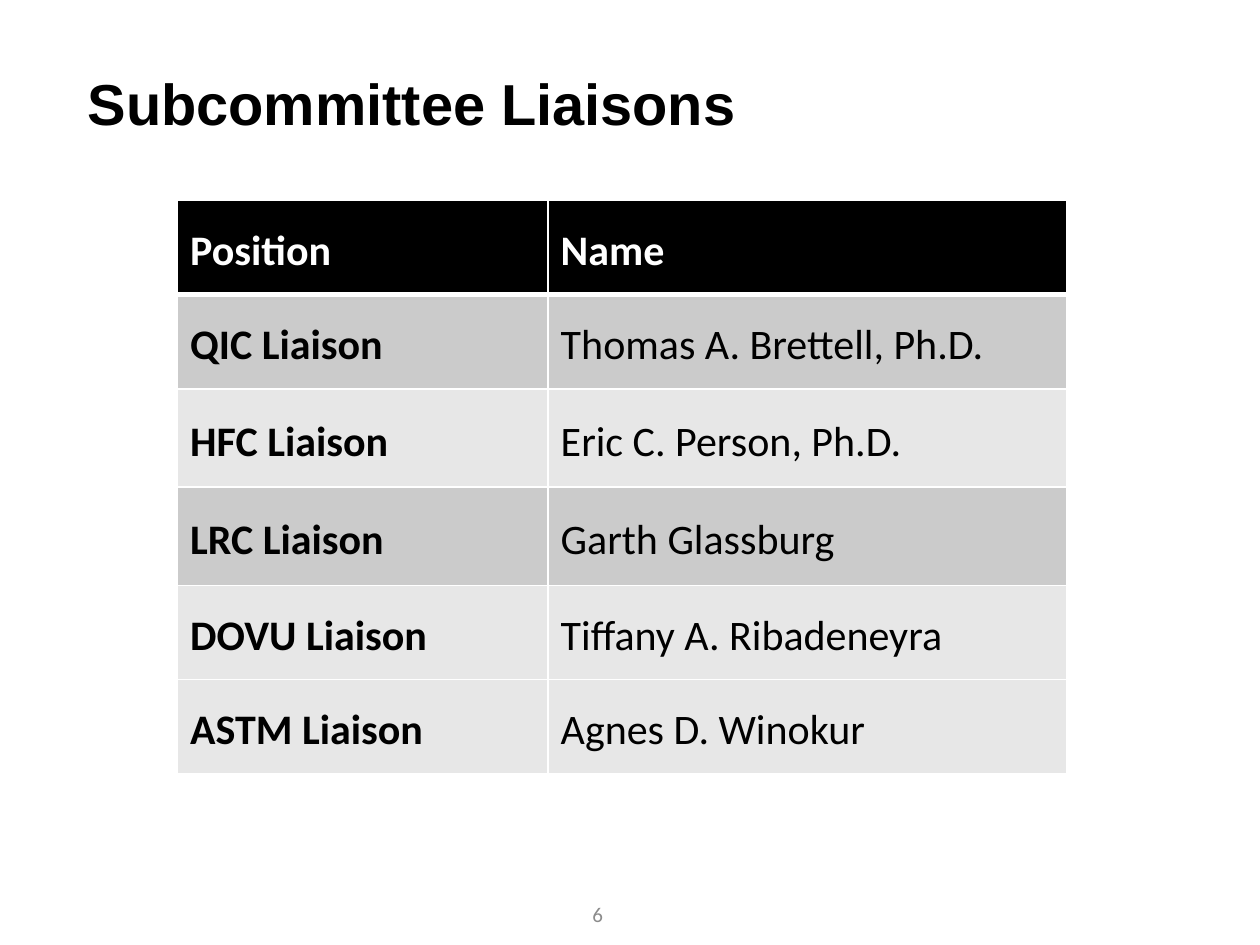
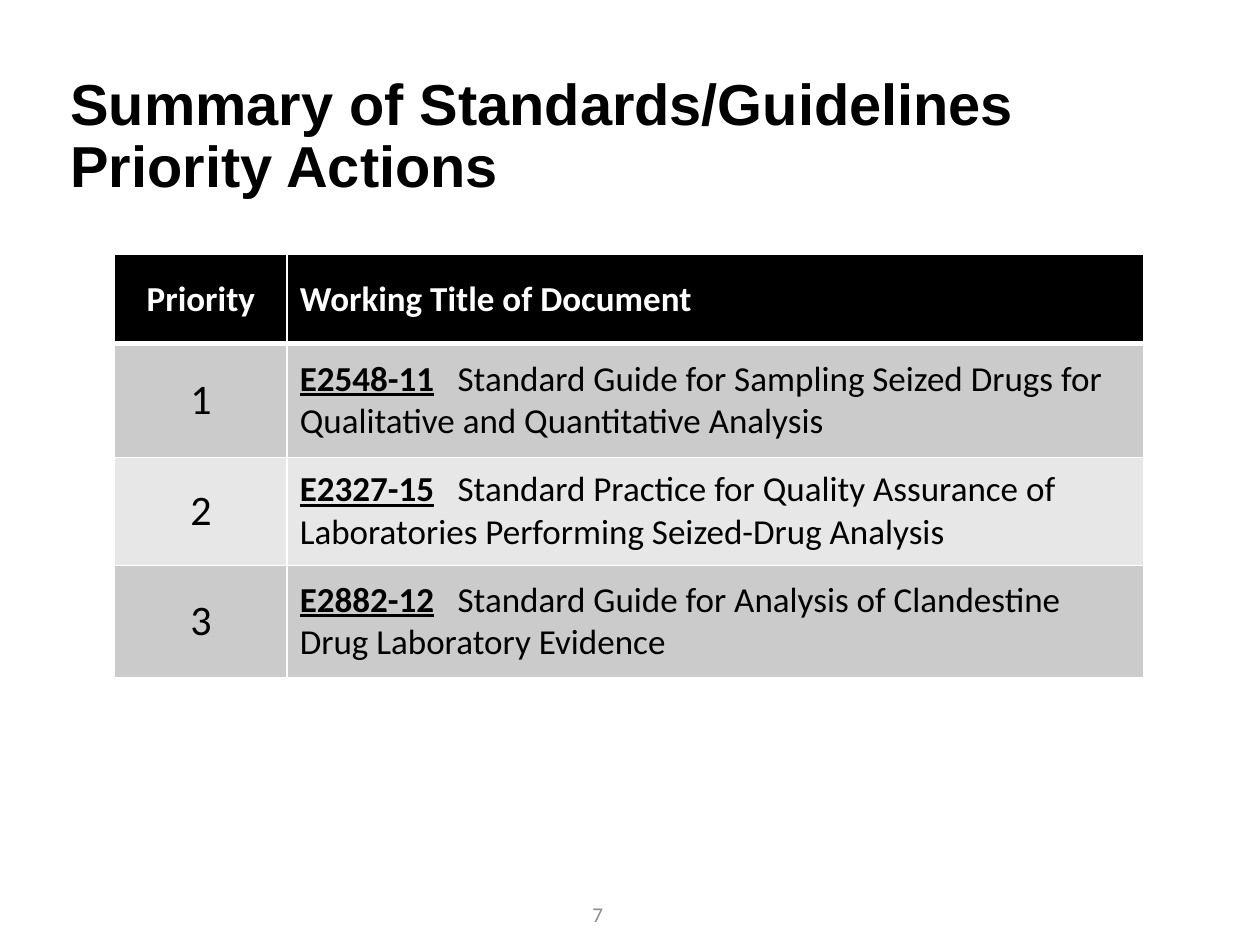
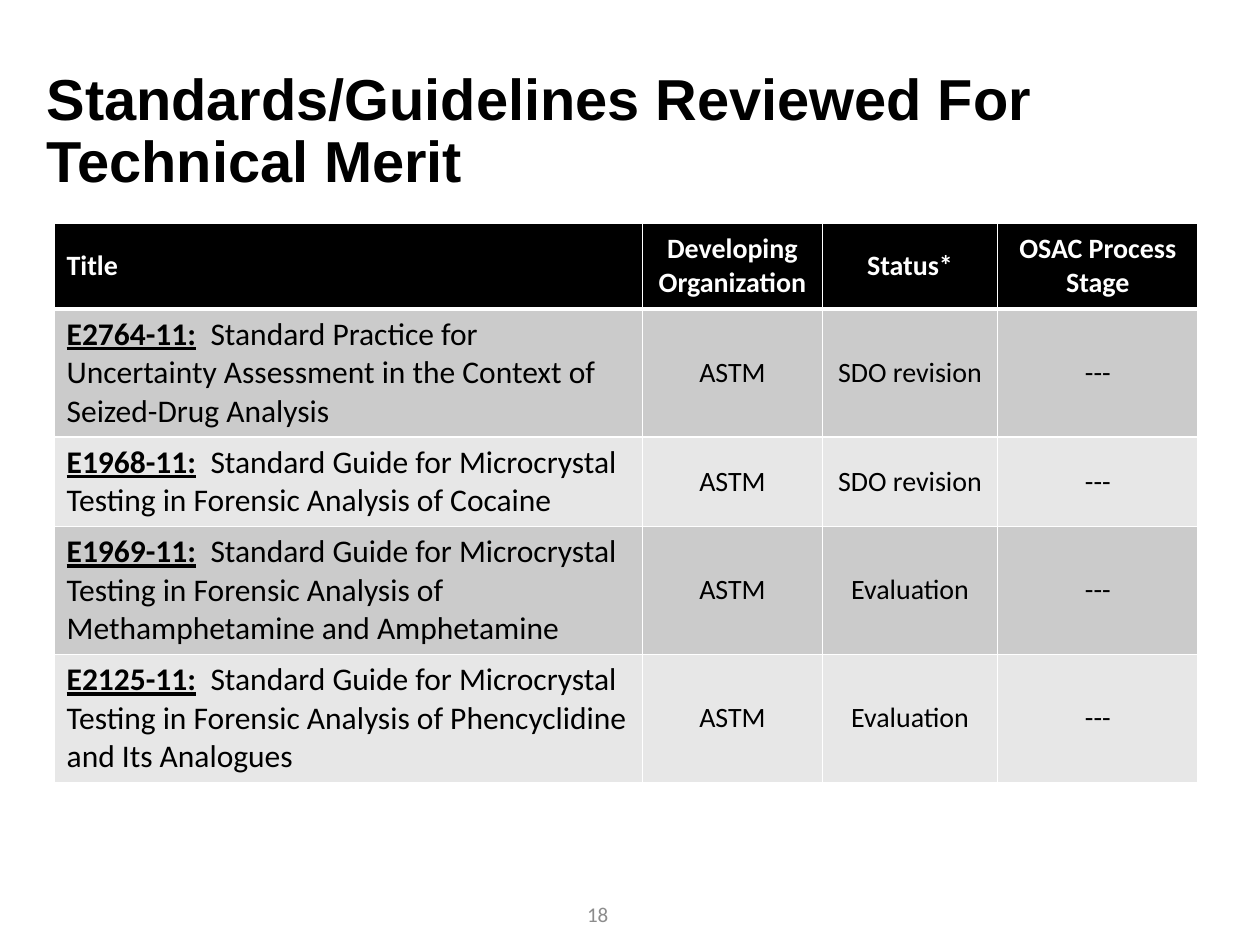
from lxml import etree
from pptx import Presentation
from pptx.dml.color import RGBColor
from pptx.enum import text
from pptx.oxml import ns
from pptx.util import Cm, Pt

BLACK = RGBColor(0x00, 0x00, 0x00)
WHITE = RGBColor(0xFF, 0xFF, 0xFF)
DARK_BAND = RGBColor(0xCB, 0xCB, 0xCB)
LIGHT_BAND = RGBColor(0xE7, 0xE7, 0xE7)
FOOTER_GREY = RGBColor(0x8C, 0x8C, 0x8C)
TITLE_FONT, BODY_FONT = "Arial", "Calibri"
LEFT, CENTER = text.PP_ALIGN.LEFT, text.PP_ALIGN.CENTER
TOP, MIDDLE = text.MSO_ANCHOR.TOP, text.MSO_ANCHOR.MIDDLE
FOOTER_AREA = (9.19, 17.91, 5.72, 1.02)

# Lengths are in centimetres. Each column is (width, alignment, anchor, size, bold).
# A cell given as a pair is a standard's underlined number and its title.
SLIDES = [
    {
        "title": "Subcommittee Liaisons",
        "title_area": (1.52, 0.76, 21.89, 2.79),
        "number": "6",
        "table_at": (3.58, 4.04),
        "columns": [(7.47, LEFT, MIDDLE, 24, True), (10.46, LEFT, MIDDLE, 24, False)],
        "heights": [1.9, 1.9, 1.98, 1.98, 1.9, 1.9],
        "bands": [DARK_BAND, LIGHT_BAND, DARK_BAND, LIGHT_BAND, LIGHT_BAND],
        "header_size": 24,
        "line_spacing": 1.15,
        "rows": [
            ("Position", "Name"),
            ("QIC Liaison", "Thomas A. Brettell, Ph.D."),
            ("HFC Liaison", "Eric C. Person, Ph.D."),
            ("LRC Liaison", "Garth Glassburg"),
            ("DOVU Liaison", "Tiffany A. Ribadeneyra"),
            ("ASTM Liaison", "Agnes D. Winokur"),
        ],
    },
    {
        "title": "Summary of Standards/Guidelines Priority Actions",
        "title_area": (1.17, 0.94, 19.91, 3.68),
        "number": "7",
        "table_at": (2.31, 5.13),
        "columns": [(3.48, CENTER, MIDDLE, 24, False), (17.27, LEFT, MIDDLE, 20, False)],
        "heights": [1.8, 2.29, 2.18, 2.26],
        "bands": [DARK_BAND, LIGHT_BAND, DARK_BAND],
        "header_size": 20,
        "line_spacing": 1.0,
        "title_tab": 3.18,
        "rows": [
            ("Priority", "Working Title of Document"),
            ("1", ("E2548-11", "\tStandard Guide for Sampling Seized Drugs for "
                   "Qualitative and Quantitative Analysis")),
            ("2", ("E2327-15", "\tStandard Practice for Quality Assurance of "
                   "Laboratories Performing Seized-Drug Analysis")),
            ("3", ("E2882-12", "\tStandard Guide for Analysis of Clandestine "
                   "Drug Laboratory Evidence")),
        ],
    },
    {
        "title": "Standards/Guidelines Reviewed For Technical Merit",
        "title_area": (0.69, 0.84, 21.89, 3.68),
        "number": "18",
        "table_at": (1.09, 4.5),
        "columns": [(11.86, LEFT, TOP, 18, False), (3.63, CENTER, MIDDLE, 16, False),
                    (3.53, CENTER, MIDDLE, 16, False), (4.04, CENTER, MIDDLE, 16, False)],
        "heights": [1.73, 2.58, 1.8, 2.58, 2.58],
        "bands": [DARK_BAND, LIGHT_BAND, DARK_BAND, LIGHT_BAND],
        "header_size": 16,
        "line_spacing": 1.0,
        "title_tab": 2.9,
        "rows": [
            ("Title", "Developing Organization", "Status*", "OSAC Process Stage"),
            (("E2764-11:", "\tStandard Practice for Uncertainty Assessment in the "
              "Context of Seized-Drug Analysis"), "ASTM", "SDO revision", "---"),
            (("E1968-11:\t", "Standard Guide for Microcrystal Testing in Forensic "
              "Analysis of Cocaine"), "ASTM", "SDO revision", "---"),
            (("E1969-11:", "\tStandard Guide for Microcrystal Testing in Forensic "
              "Analysis of Methamphetamine and Amphetamine"), "ASTM", "Evaluation", "---"),
            (("E2125-11:", "\tStandard Guide for Microcrystal Testing in Forensic "
              "Analysis of Phencyclidine and Its Analogues"), "ASTM", "Evaluation", "---"),
        ],
    },
]


def set_font(font, name, size, color, bold=False):
    font.name, font.size, font.bold = name, Pt(size), bold
    font.color.rgb = color


def add_text(page, area, words, font, align=LEFT, line_spacing=1.0):
    """Add a vertically centred text box; font holds set_font's arguments."""
    frame = page.shapes.add_textbox(*map(Cm, area)).text_frame
    frame.word_wrap = True
    frame.vertical_anchor = MIDDLE
    para = frame.paragraphs[0]
    para.text, para.alignment, para.line_spacing = words, align, line_spacing
    set_font(para.font, *font)


def add_borders(cell, row):
    """Draw white cell borders, with a thick line below the header row."""
    widths = {"L": 1, "R": 1, "T": 3 if row == 1 else 1, "B": 3 if row == 0 else 1}
    properties = cell._tc.get_or_add_tcPr()
    for side, width in widths.items():
        line = etree.SubElement(properties, ns.qn(f"a:ln{side}"), w=str(Pt(width)))
        fill = etree.SubElement(line, ns.qn("a:solidFill"))
        etree.SubElement(fill, ns.qn("a:srgbClr"), val=str(WHITE))


def add_tab_stop(para, position):
    tabs = etree.SubElement(para._p.get_or_add_pPr(), ns.qn("a:tabLst"))
    etree.SubElement(tabs, ns.qn("a:tab"), pos=str(Cm(position)), algn="l")


def fill_cell(cell, content, row, column, slide):
    _, align, anchor, size, bold = column
    color, band = BLACK, slide["bands"][row - 1]
    if row == 0:
        anchor, size, bold = MIDDLE, slide["header_size"], True
        color, band = WHITE, BLACK
    add_borders(cell, row)
    cell.fill.solid()
    cell.fill.fore_color.rgb = band
    cell.vertical_anchor = anchor
    para = cell.text_frame.paragraphs[0]
    para.alignment, para.line_spacing = align, slide["line_spacing"]
    is_standard = isinstance(content, tuple)
    if is_standard:
        add_tab_stop(para, slide["title_tab"])
    for index, words in enumerate(content if is_standard else [content]):
        span = para.add_run()
        span.text = words
        is_number = is_standard and index == 0
        set_font(span.font, BODY_FONT, size, color, bold or is_number)
        if is_number:
            span.font.underline = True


def add_grid(page, slide):
    columns, heights = slide["columns"], slide["heights"]
    size = sum(column[0] for column in columns), sum(heights)
    table = page.shapes.add_table(len(heights), len(columns),
                                  *map(Cm, slide["table_at"] + size)).table
    for index, column in enumerate(columns):
        table.columns[index].width = Cm(column[0])
    for row, (height, contents) in enumerate(zip(heights, slide["rows"])):
        table.rows[row].height = Cm(height)
        for index, content in enumerate(contents):
            fill_cell(table.cell(row, index), content, row, columns[index], slide)


def main():
    deck = Presentation()
    deck.slide_width, deck.slide_height = Cm(25.4), Cm(19.05)
    for slide in SLIDES:
        page = deck.slides.add_slide(deck.slide_layouts[6])
        add_text(page, slide["title_area"], slide["title"],
                 (TITLE_FONT, 33, BLACK, True), line_spacing=0.9)
        add_grid(page, slide)
        add_text(page, FOOTER_AREA, slide["number"],
                 (BODY_FONT, 12, FOOTER_GREY), align=CENTER)
    deck.save("out.pptx")


if __name__ == "__main__":
    main()
